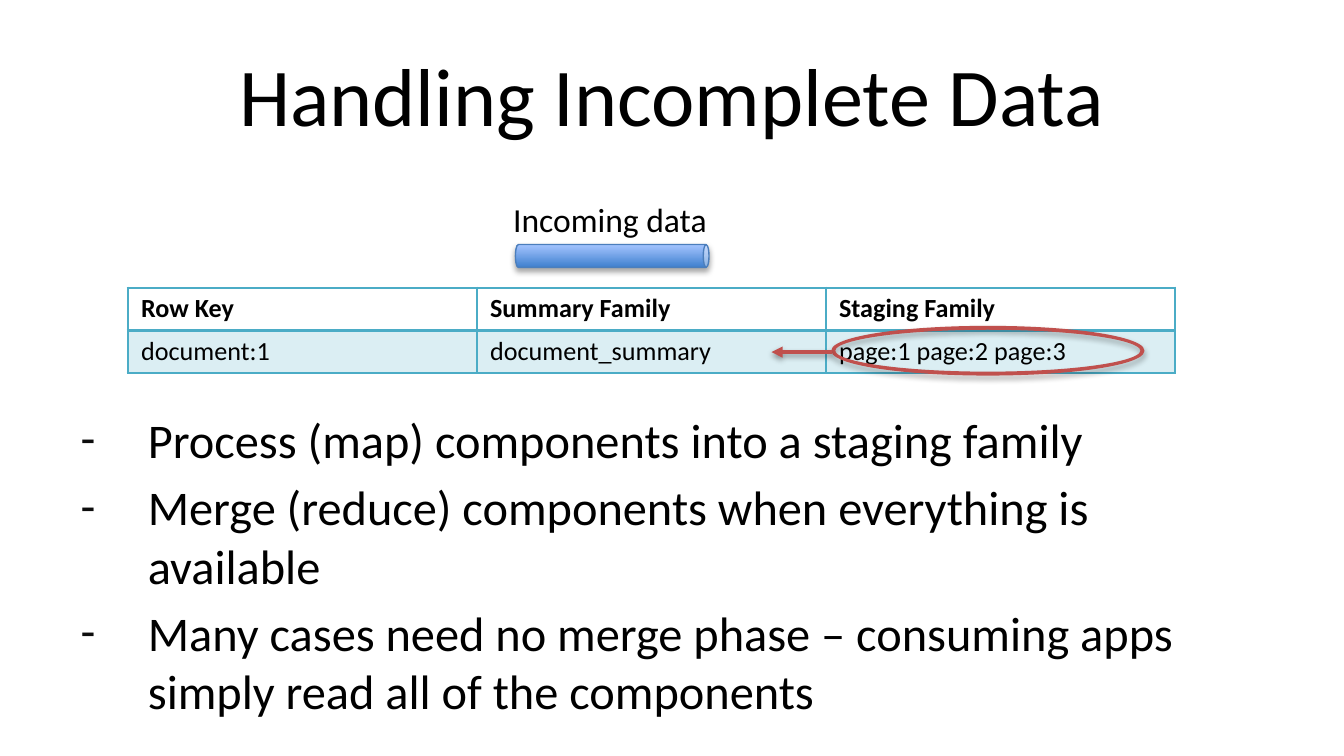
from lxml import etree
from pptx import Presentation
from pptx import util as u
from pptx.dml.color import RGBColor
from pptx.enum import shapes, text
from pptx.oxml.ns import qn

BLACK = RGBColor(0x00, 0x00, 0x00)
BULLET = RGBColor(0x0D, 0x0D, 0x0D)
TEAL = RGBColor(0x4B, 0xAC, 0xC6)
RED = RGBColor(0xC0, 0x50, 0x4D)
PIPE_DARK = RGBColor(0x3F, 0x80, 0xCE)
PIPE_LIGHT = RGBColor(0xA4, 0xC4, 0xFF)
PIPE_EDGE = RGBColor(0x4B, 0x7E, 0xBC)

THIN, THICK = 1.25, 2
ROWS = [
    ["Row Key", "Summary Family", "Staging Family"],
    ["document:1", "document_summary", "page:1 page:2 page:3"],
]
POINTS = [
    "Process (map) components into a staging family",
    "Merge (reduce) components when everything is available",
    "Many cases need no merge phase – consuming apps simply read all of the components",
]


def inches(*lengths):
    return [u.Inches(length) for length in lengths]


def sub(parent, tag, **attributes):
    return etree.SubElement(parent, qn(tag), **attributes)


def write(paragraph, words, size, bold=False, align=None, color=BLACK):
    run = paragraph.add_run()
    run.text = words
    run.font.name = "Calibri"
    run.font.size = u.Pt(size)
    run.font.bold = bold
    run.font.color.rgb = color
    if align is not None:
        paragraph.alignment = align


def set_line(part, color, width):
    part.line.color.rgb = color
    part.line.width = u.Pt(width)


def cast_shadow(part, distance=1.8, opacity=35):
    effects = sub(part._element.spPr, "a:effectLst")
    shadow = sub(effects, "a:outerShdw", blurRad=str(u.Pt(3.1)), dist=str(u.Pt(distance)),
                 dir="5400000", rotWithShape="0")
    sub(sub(shadow, "a:srgbClr", val="000000"), "a:alpha", val=str(opacity * 1000))


def set_borders(cell, widths):
    properties = cell._tc.get_or_add_tcPr()
    for position, (side, width) in enumerate(widths.items()):
        border = etree.Element(qn("a:ln" + side), w=str(u.Pt(width)))
        sub(sub(border, "a:solidFill"), "a:srgbClr", val=str(TEAL))
        properties.insert(position, border)


def place(holder, left, top, width, height):
    holder.left, holder.top, holder.width, holder.height = inches(left, top, width, height)
    holder.text_frame.auto_size = text.MSO_AUTO_SIZE.NONE
    return holder.text_frame


def add_heading(slide, left, top, width, height):
    frame = place(slide.shapes.title, left, top, width, height)
    frame.vertical_anchor = text.MSO_ANCHOR.MIDDLE
    write(frame.paragraphs[0], "Handling Incomplete Data", 44, align=text.PP_ALIGN.CENTER)


def add_points(slide, left, top, width, height):
    frame = place(slide.placeholders[1], left, top, width, height)
    for index, point in enumerate(POINTS):
        paragraph = frame.add_paragraph() if index else frame.paragraphs[0]
        write(paragraph, point, 25.9)
        paragraph.space_before = u.Pt(5.2)
        properties = paragraph._p.get_or_add_pPr()
        properties.set("marL", str(u.Inches(0.5)))
        properties.set("indent", str(u.Inches(-0.5)))
        sub(sub(properties, "a:buClr"), "a:srgbClr", val=str(BULLET))
        sub(properties, "a:buFont", typeface="Calibri")
        sub(properties, "a:buChar", char="-")


def add_family_table(slide, left, top, width, height):
    grid = slide.shapes.add_table(2, 3, *inches(left, top, width, height)).table
    for row, words in enumerate(ROWS):
        for column, entry in enumerate(words):
            cell = grid.cell(row, column)
            cell.margin_top = cell.margin_bottom = u.Inches(0.04)
            write(cell.text_frame.paragraphs[0], entry, 14, bold=row == 0)
            if row == 0:
                cell.fill.background()
                set_borders(cell, {"L": THIN, "R": THIN, "T": THIN, "B": THICK})
            else:
                cell.fill.solid()
                cell.fill.fore_color.rgb = TEAL
                tint = cell._tc.tcPr.find(".//" + qn("a:srgbClr"))
                sub(tint, "a:alpha", val="20000")
                set_borders(cell, {"L": THIN, "R": THIN, "T": THICK, "B": THIN})


def add_incoming_pipe(slide, left, top, width, height):
    label = slide.shapes.add_textbox(*inches(left, top, width, 0.4)).text_frame
    label.word_wrap = False
    label.auto_size = text.MSO_AUTO_SIZE.SHAPE_TO_FIT_TEXT
    write(label.paragraphs[0], "Incoming data", 18)

    length, thickness = 1.44, 0.17
    center_x, center_y = left + width / 2, top + height - thickness / 2
    pipe = slide.shapes.add_shape(
        shapes.MSO_SHAPE.CAN,
        *inches(center_x - thickness / 2, center_y - length / 2, thickness, length))
    pipe.rotation = 90
    pipe.fill.gradient()
    pipe.fill.gradient_angle = 90
    for stop, color in zip(pipe.fill.gradient_stops, (PIPE_DARK, PIPE_LIGHT)):
        stop.color.rgb = color
    pipe._element.spPr.find(qn("a:gradFill")).set("rotWithShape", "0")
    set_line(pipe, PIPE_EDGE, 0.75)
    cast_shadow(pipe)


def add_merge_mark(slide, left, top, width, height):
    arrow_length = 0.45
    ring = slide.shapes.add_shape(
        shapes.MSO_SHAPE.DONUT,
        *inches(left + arrow_length, top, width - arrow_length, height))
    ring.adjustments[0] = 0.053
    ring.fill.solid()
    ring.fill.fore_color.rgb = RED
    set_line(ring, RED, 0.75)
    cast_shadow(ring)

    middle = top + height / 2 + 0.01
    arrow = slide.shapes.add_connector(
        shapes.MSO_CONNECTOR.STRAIGHT, *inches(left + arrow_length, middle, left, middle))
    set_line(arrow, RED, 2)
    sub(arrow.line._get_or_add_ln(), "a:tailEnd", type="triangle")
    cast_shadow(arrow, distance=1.6, opacity=38)


def main():
    deck = Presentation()
    deck.slide_width = u.Inches(10)
    deck.slide_height = deck.slide_width * 9 // 16
    slide = deck.slides.add_slide(deck.slide_layouts[1])
    add_heading(slide, 0.5, 0.23, 9, 0.94)
    add_family_table(slide, 0.95, 2.14, 7.79, 0.62)
    add_incoming_pipe(slide, 3.72, 1.43, 1.67, 0.56)
    add_merge_mark(slide, 5.74, 2.43, 2.77, 0.36)
    add_points(slide, 0.5, 3, 9, 2.03)
    deck.save("out.pptx")


if __name__ == "__main__":
    main()
